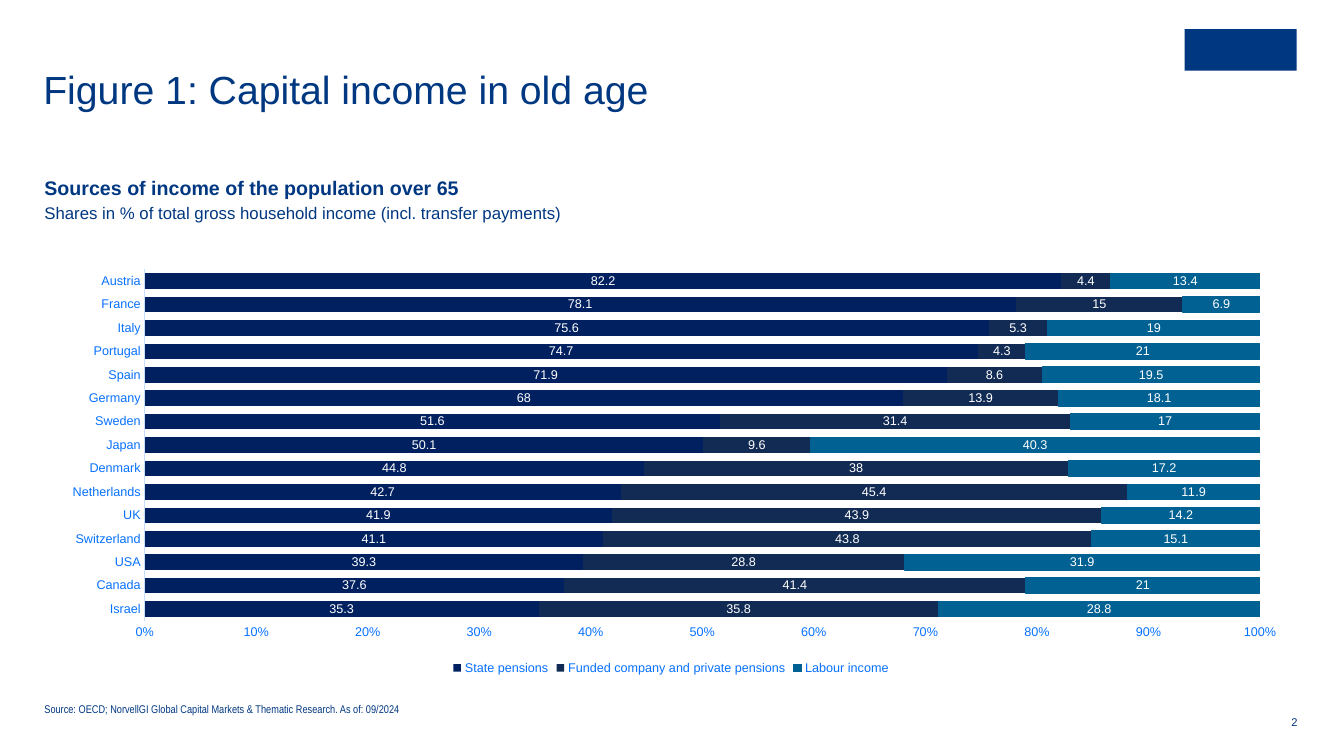
from lxml import etree
from pptx import Presentation
from pptx.chart.data import CategoryChartData
from pptx.dml.color import RGBColor
from pptx.enum.chart import XL_CHART_TYPE, XL_LABEL_POSITION, XL_LEGEND_POSITION, XL_TICK_MARK
from pptx.enum.shapes import MSO_SHAPE
from pptx.enum.text import MSO_ANCHOR, MSO_AUTO_SIZE, PP_ALIGN
from pptx.oxml.ns import qn
from pptx.util import Inches, Pt

STACKED_BAR = XL_CHART_TYPE.BAR_STACKED_100
CENTER_LABEL = XL_LABEL_POSITION.CENTER
LEGEND_BOTTOM = XL_LEGEND_POSITION.BOTTOM
NO_TICK = XL_TICK_MARK.NONE
RECTANGLE = MSO_SHAPE.RECTANGLE
TOP, BOTTOM = MSO_ANCHOR.TOP, MSO_ANCHOR.BOTTOM
NO_AUTOFIT = MSO_AUTO_SIZE.NONE
LEFT, RIGHT = PP_ALIGN.LEFT, PP_ALIGN.RIGHT

COMPARISON_LAYOUT = 4
COLORS = {
    "brand": "003781",
    "axis_text": "0771FF",
    "axis_line": "C6DEFF",
    "label": "FFFFFF",
    "state": "002060",
    "funded": "122B54",
    "labour": "006192",
}
SERIES = [
    ("State pensions", "state"),
    ("Funded company and private pensions", "funded"),
    ("Labour income", "labour"),
]
INCOME_SHARES = [
    ("Israel", 35.3, 35.8, 28.8),
    ("Canada", 37.6, 41.4, 21),
    ("USA", 39.3, 28.8, 31.9),
    ("Switzerland", 41.1, 43.8, 15.1),
    ("UK", 41.9, 43.9, 14.2),
    ("Netherlands", 42.7, 45.4, 11.9),
    ("Denmark", 44.8, 38, 17.2),
    ("Japan", 50.1, 9.6, 40.3),
    ("Sweden", 51.6, 31.4, 17),
    ("Germany", 68, 13.9, 18.1),
    ("Spain", 71.9, 8.6, 19.5),
    ("Portugal", 74.7, 4.3, 21),
    ("Italy", 75.6, 5.3, 19),
    ("France", 78.1, 15, 6.9),
    ("Austria", 82.2, 4.4, 13.4),
]
PLOT_LAYOUT = {"x": 0.08, "y": 0.02, "w": 0.89, "h": 0.84}


def color(name):
    return RGBColor.from_string(COLORS[name])


def set_font(font, size, color_name, name="Arial", bold=False):
    font.size = Pt(size)
    font.name = name
    font.bold = bold
    font.color.rgb = color(color_name)


def place(shape, left, top, width, height):
    shape.left, shape.top = Inches(left), Inches(top)
    shape.width, shape.height = Inches(width), Inches(height)


def write_text(shape, box, text, size, font_name="Arial", bold=False,
               anchor=TOP, align=LEFT, line_spacing=1.0, gap=0):
    place(shape, *box)
    frame = shape.text_frame
    frame.text = text
    frame.word_wrap = True
    frame.auto_size = NO_AUTOFIT
    frame.vertical_anchor = anchor
    frame.margin_left = frame.margin_right = 0
    frame.margin_top = frame.margin_bottom = 0
    paragraph = frame.paragraphs[0]
    paragraph.alignment = align
    paragraph.line_spacing = line_spacing
    paragraph.space_before = paragraph.space_after = Pt(gap)
    properties = paragraph._p.get_or_add_pPr()
    properties.set("marL", "0")
    properties.set("indent", "0")
    etree.SubElement(properties, qn("a:buNone"))
    set_font(paragraph.runs[0].font, size, "brand", font_name, bold)


def add_logo_block(slide):
    block = slide.shapes.add_shape(
        RECTANGLE, Inches(11.75), Inches(0.29), Inches(1.11), Inches(0.41))
    block.shadow.inherit = False
    block.fill.solid()
    block.fill.fore_color.rgb = color("brand")
    block.line.fill.background()


def set_plot_layout(chart):
    plot_area = chart._chartSpace.chart.plotArea
    for old_layout in plot_area.findall(qn("c:layout")):
        plot_area.remove(old_layout)
    layout = etree.Element(qn("c:layout"))
    manual = etree.SubElement(layout, qn("c:manualLayout"))
    settings = {"layoutTarget": "inner", "xMode": "edge", "yMode": "edge", **PLOT_LAYOUT}
    for tag, value in settings.items():
        etree.SubElement(manual, qn(f"c:{tag}")).set("val", str(value))
    plot_area.insert(0, layout)


def style_axis(axis):
    axis.major_tick_mark = axis.minor_tick_mark = NO_TICK
    axis.has_major_gridlines = False
    set_font(axis.tick_labels.font, 9, "axis_text")


def style_series(series, color_name):
    series.format.fill.solid()
    series.format.fill.fore_color.rgb = color(color_name)
    labels = series.data_labels
    labels.show_value = True
    labels.position = CENTER_LABEL
    set_font(labels.font, 9, "label")


def add_income_chart(slide):
    data = CategoryChartData()
    countries, *columns = zip(*INCOME_SHARES)
    data.categories = countries
    for (name, _), values in zip(SERIES, columns):
        data.add_series(name, values)
    chart = slide.shapes.add_chart(
        STACKED_BAR, Inches(0.44), Inches(2.59), Inches(12.43), Inches(4.15), data).chart
    set_font(chart.font, 10, "brand")
    chart.has_title = False
    chart.has_legend = True
    chart.legend.position = LEGEND_BOTTOM
    chart.legend.include_in_layout = False
    set_font(chart.legend.font, 9, "axis_text")

    style_axis(chart.category_axis)
    chart.category_axis.format.line.color.rgb = color("axis_line")
    chart.category_axis.format.line.width = Pt(0.75)
    style_axis(chart.value_axis)
    chart.value_axis.format.line.fill.background()
    chart.value_axis.tick_labels.number_format = "0%"
    chart.value_axis.tick_labels.number_format_is_linked = False

    plot = chart.plots[0]
    plot.gap_width = 50
    plot.overlap = 100
    plot.vary_by_categories = False
    for series, (_, color_name) in zip(plot.series, SERIES):
        style_series(series, color_name)
    labour_line = plot.series[2].format.line
    labour_line.color.rgb = color("labour")
    labour_line.width = Pt(0.75)
    set_plot_layout(chart)


def main():
    presentation = Presentation()
    presentation.slide_width = Inches(13.33)
    presentation.slide_height = Inches(7.5)
    slide = presentation.slides.add_slide(presentation.slide_layouts[COMPARISON_LAYOUT])
    title, heading, source, subheading, unused = slide.placeholders
    unused.element.getparent().remove(unused.element)

    add_logo_block(slide)
    write_text(title, (0.43, 0.7, 10.87, 0.87), "Figure 1: Capital income in old age",
               28, line_spacing=0.9)
    write_text(heading, (0.44, 1.74, 12.43, 0.27),
               "Sources of income of the population over 65", 14, bold=True, gap=3.6)
    write_text(subheading, (0.44, 2.01, 12.43, 0.27),
               "Shares in % of total gross household income (incl. transfer payments)",
               12, gap=3.6)
    write_text(source, (0.44, 6.82, 11.63, 0.28),
               "Source: OECD; NorvellGI Global Capital Markets & Thematic Research. As of: 09/2024",
               8, "Arial Narrow", anchor=BOTTOM)
    add_income_chart(slide)
    page_number = slide.shapes.add_textbox(0, 0, 0, 0)
    write_text(page_number, (11.23, 7.09, 1.64, 0.14), "2", 8, anchor=BOTTOM, align=RIGHT)
    presentation.save("out.pptx")


if __name__ == "__main__":
    main()
